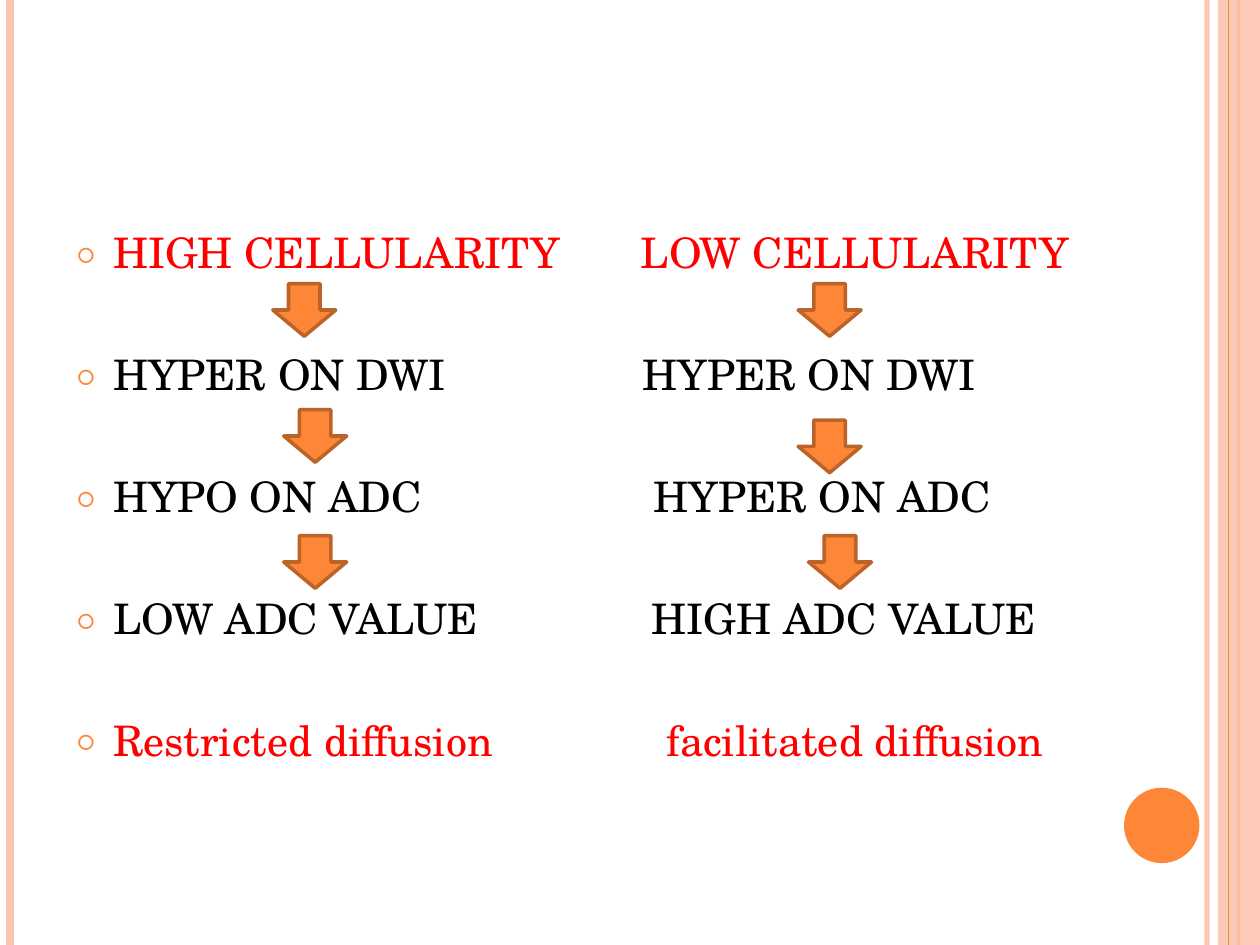
"""Builds a slide comparing high and low cellularity on diffusion imaging."""
from typing import NamedTuple

from lxml import etree
from pptx import Presentation
from pptx.dml.color import RGBColor
from pptx.enum.shapes import MSO_CONNECTOR, MSO_SHAPE
from pptx.enum.text import PP_ALIGN
from pptx.oxml.ns import qn
from pptx.util import Cm, Pt

RECT, OVAL, DOWN_ARROW = MSO_SHAPE.RECTANGLE, MSO_SHAPE.OVAL, MSO_SHAPE.DOWN_ARROW
STRAIGHT, LEFT = MSO_CONNECTOR.STRAIGHT, PP_ALIGN.LEFT
COLORS = {"orange": "FE8637", "peach": "FEC3AE", "outline": "BC6329",
          "red": "FF0000", "black": "000000"}
FONT = "TeX Gyre Schola"
WIDTH, HEIGHT = 25.4, 19.05
BULLET_INDENT = 0.76
ROW_GAP = 40.8


class Stripe(NamedTuple):
    x: float
    color: str
    weight: float
    alpha: int = 100


class Block(NamedTuple):
    kind: MSO_SHAPE
    x: float
    y: float
    w: float
    h: float
    fill: str
    alpha: int = 100
    line: str = ""


class Row(NamedTuple):
    high: str
    low: str
    low_indent: float
    color: str = "black"


BACK_STRIPES = [Stripe(24.33, "peach", 3, 93), Stripe(0.21, "peach", 4.5),
                Stripe(24.97, "orange", 1.5)]
BAND = Block(RECT, 24.55, 0, 0.85, HEIGHT, "peach", 87)
FRONT_STRIPE = Stripe(24.77, "orange", 0.75)
DISC = Block(OVAL, 22.66, 15.88, 1.52, 1.52, "orange")
ROWS = [
    Row("HIGH CELLULARITY", "LOW CELLULARITY", 0, "red"),
    Row("HYPER ON DWI", "HYPER ON DWI", 0.04),
    Row("HYPO ON ADC", "HYPER ON ADC", 0.26),
    Row("LOW ADC VALUE", "HIGH ADC VALUE", 0.22),
    Row("Restricted diffusion", "facilitated diffusion", 0.52, "red"),
]
ARROWS = [(5.5, 5.72), (5.72, 8.26), (5.72, 10.8),
          (16.09, 5.72), (16.09, 8.47), (16.3, 10.8)]


def rgb(name: str) -> RGBColor:
    return RGBColor.from_string(COLORS[name])


def set_alpha(element, percent: int) -> None:
    if percent < 100:
        color = next(element.iter(qn("a:srgbClr")))
        etree.SubElement(color, qn("a:alpha"), val=str(percent * 1000))


def draw_stripe(s, stripe: Stripe) -> None:
    sp = s.shapes.add_connector(STRAIGHT, Cm(stripe.x), 0, Cm(stripe.x), Cm(HEIGHT))
    sp.line.color.rgb = rgb(stripe.color)
    sp.line.width = Pt(stripe.weight)
    props = sp._element.spPr
    set_alpha(props, stripe.alpha)
    etree.SubElement(props, qn("a:effectLst"))


def draw_block(s, block: Block) -> None:
    sp = s.shapes.add_shape(block.kind, Cm(block.x), Cm(block.y), Cm(block.w), Cm(block.h))
    sp.shadow.inherit = False
    sp.fill.solid()
    sp.fill.fore_color.rgb = rgb(block.fill)
    set_alpha(sp._element.spPr, block.alpha)
    if block.line:
        sp.line.color.rgb = rgb(block.line)
        sp.line.width = Pt(2)
    else:
        sp.line.fill.background()


def add_bullet(p) -> None:
    props = p._p.get_or_add_pPr()
    props.set("marL", str(Cm(BULLET_INDENT)))
    props.set("indent", str(-Cm(BULLET_INDENT)))
    color = etree.SubElement(props, qn("a:buClr"))
    etree.SubElement(color, qn("a:srgbClr"), val=COLORS["orange"])
    etree.SubElement(props, qn("a:buSzPct"), val="70000")
    etree.SubElement(props, qn("a:buFont"), typeface=FONT)
    etree.SubElement(props, qn("a:buChar"), char="○")


def write_text(p, text: str, *, color: str, size: float = 24, before: float = 0,
               indent: float = 0, bullet: bool = False) -> None:
    p.alignment = LEFT
    p.space_before = Pt(before)
    if bullet:
        add_bullet(p)
    else:
        p._p.get_or_add_pPr().set("marL", str(Cm(indent)))
    r = p.add_run()
    r.text = text
    r.font.name = FONT
    r.font.size = Pt(size)
    r.font.color.rgb = rgb(color)


def draw_column(s, x: float, w: float, field: str, bullet: bool) -> None:
    tf = s.shapes.add_textbox(Cm(x), Cm(4.45), Cm(w), Cm(13.55)).text_frame
    tf.word_wrap = True
    for i, row in enumerate(ROWS):
        p = tf.add_paragraph() if i else tf.paragraphs[0]
        write_text(p, getattr(row, field), color=row.color, bullet=bullet,
                   before=ROW_GAP if i else 0, indent=row.low_indent)


def main() -> None:
    prs = Presentation()
    prs.slide_width, prs.slide_height = Cm(WIDTH), Cm(HEIGHT)
    s = prs.slides.add_slide(prs.slide_layouts[6])
    for stripe in BACK_STRIPES:
        draw_stripe(s, stripe)
    draw_block(s, BAND)
    draw_stripe(s, FRONT_STRIPE)
    draw_block(s, DISC)
    draw_column(s, 1.27, 11.3, "high", bullet=True)
    draw_column(s, 12.67, 9.35, "low", bullet=False)
    for x, y in ARROWS:
        draw_block(s, Block(DOWN_ARROW, x, y, 1.27, 1.06, "orange", line="outline"))
    prs.save("out.pptx")


if __name__ == "__main__":
    main()
